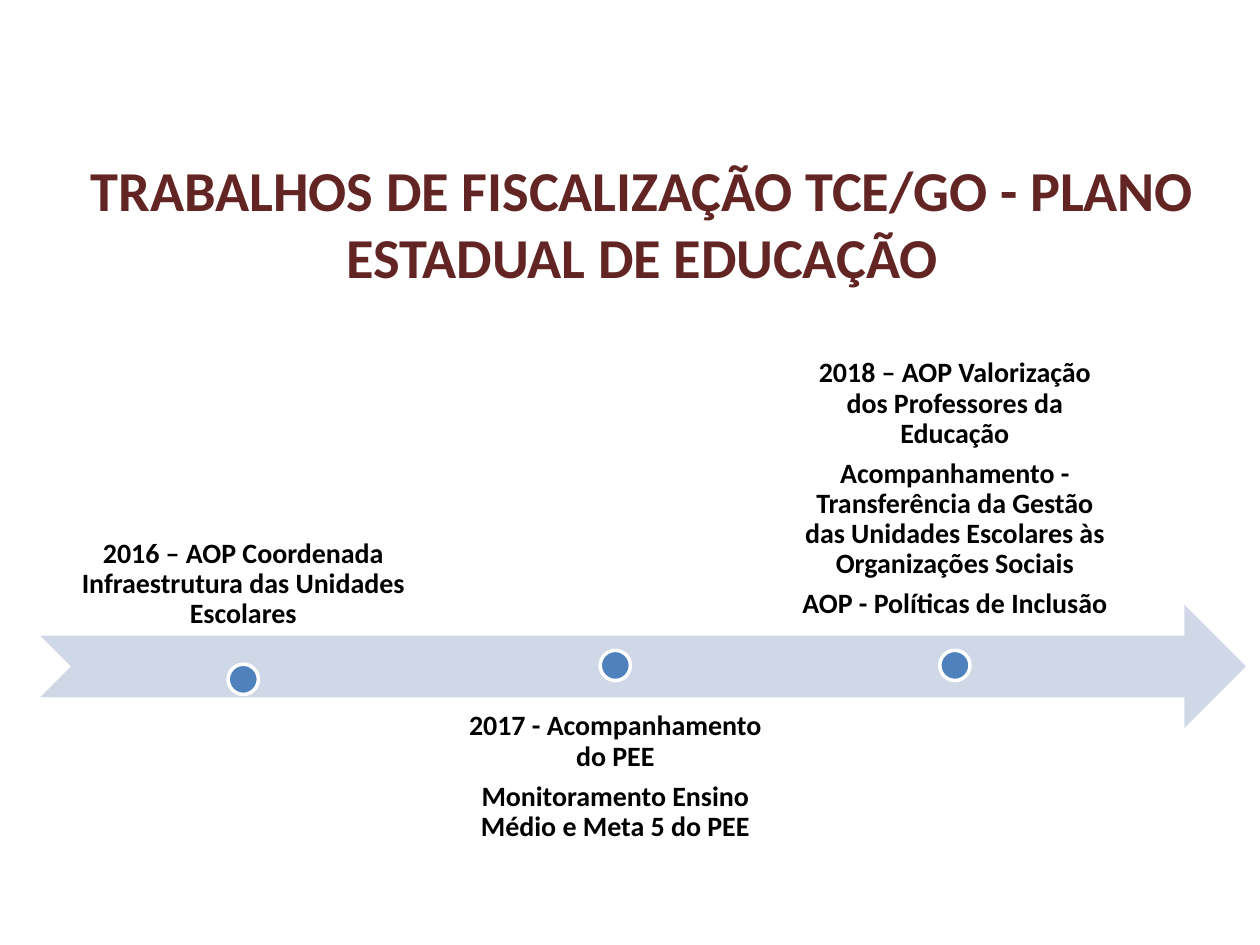
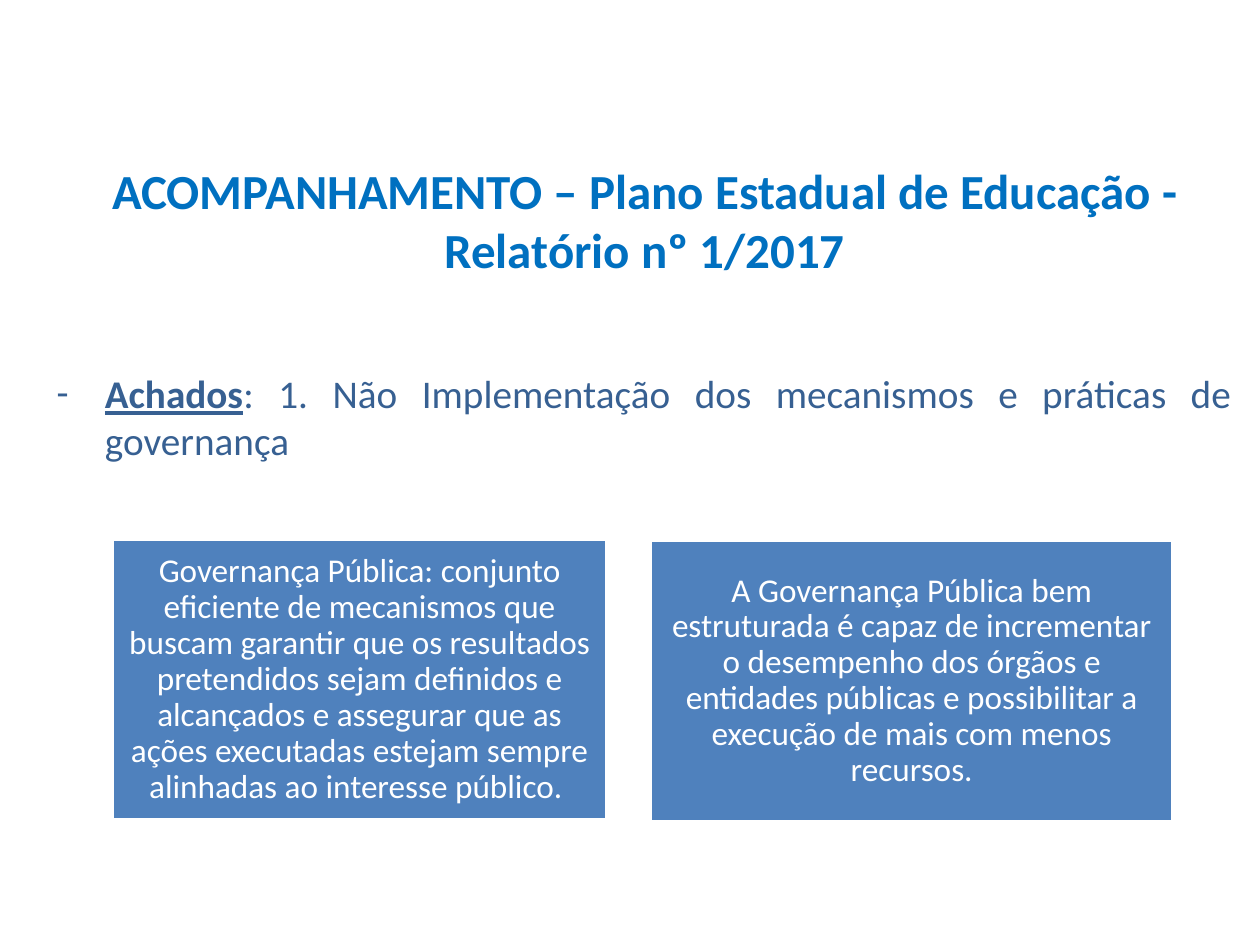
from lxml import etree
from pptx import Presentation
from pptx import util as u
from pptx.dml.color import RGBColor
from pptx.enum import shapes, text
from pptx.oxml.ns import qn

WINE = RGBColor(0x63, 0x25, 0x23)
AZURE = RGBColor(0x00, 0x70, 0xC0)
NAVY = RGBColor(0x37, 0x60, 0x92)
BLUE = RGBColor(0x4F, 0x81, 0xBD)
PALE = RGBColor(0xD0, 0xD8, 0xE8)
BLACK = RGBColor(0, 0, 0)
WHITE = RGBColor(255, 255, 255)

MID, LOW, TOP = text.MSO_ANCHOR.MIDDLE, text.MSO_ANCHOR.BOTTOM, text.MSO_ANCHOR.TOP
KIND = shapes.MSO_SHAPE
DOT = 0.61


def put(item, fmt):
    for key, val in fmt.items():
        setattr(item, key, val)


class Deck:
    def __init__(self):
        self.prs = Presentation()
        put(self.prs, {"slide_width": u.Cm(25.4), "slide_height": u.Cm(19.05)})
        self.slide = None

    def page(self, layout):
        self.slide = self.prs.slides.add_slide(self.prs.slide_layouts[layout])

    def place(self, item, box):
        put(item, dict(zip(("left", "top", "width", "height"), map(u.Cm, box))))

    def frame(self, item, anchor, inset=None, low=None):
        tf = item.text_frame
        put(tf, {"word_wrap": True, "auto_size": text.MSO_AUTO_SIZE.NONE,
                 "vertical_anchor": anchor})
        if inset is not None:
            for side in ("left", "right", "top", "bottom"):
                setattr(tf, f"margin_{side}", u.Cm(inset))
        if low is not None:
            tf.margin_bottom = u.Cm(low)
        return tf

    def run(self, par, words, size, tint, **fmt):
        run = par.add_run()
        run.text = words
        put(run.font, {"name": "Calibri", "size": u.Pt(size), **fmt})
        run.font.color.rgb = tint

    def fill(self, tf, lines, size, tint, bold):
        for num, line in enumerate(lines):
            par = tf.add_paragraph() if num else tf.paragraphs[0]
            put(par, {"alignment": text.PP_ALIGN.CENTER, "line_spacing": 0.9,
                      "space_after": u.Pt(0.35 * size)})
            self.run(par, line, size, tint, bold=bold)

    def title(self, words, box, size, tint):
        item = self.slide.shapes.title
        self.place(item, box)
        par = self.frame(item, MID).paragraphs[0]
        par.alignment = text.PP_ALIGN.CENTER
        self.run(par, words, size, tint, bold=True)

    def list(self, head, rest, box):
        item = self.slide.placeholders[1]
        self.place(item, box)
        par = self.frame(item, TOP).paragraphs[0]
        put(par, {"alignment": text.PP_ALIGN.JUSTIFY, "space_before": u.Pt(0)})
        props = par._p.get_or_add_pPr()
        props.set("marL", str(u.Cm(0.97)))
        props.set("indent", str(-u.Cm(0.97)))
        etree.SubElement(props, qn("a:buFont")).set("typeface", "Calibri")
        etree.SubElement(props, qn("a:buChar")).set("char", "-")
        self.run(par, head, 22.4, NAVY, bold=True, underline=True)
        self.run(par, rest, 22.4, NAVY, bold=False, underline=False)

    def shape(self, kind, box, tint, edge=True):
        item = self.slide.shapes.add_shape(kind, *map(u.Cm, box))
        item.shadow.inherit = False
        item.fill.solid()
        item.fill.fore_color.rgb = tint
        if edge:
            item.line.color.rgb = WHITE
            item.line.width = u.Pt(2)
        else:
            item.line.fill.background()
        return item

    def card(self, words, box):
        item = self.shape(KIND.RECTANGLE, box, BLUE)
        self.fill(self.frame(item, MID, 0.2), [words], 19, WHITE, False)

    def event(self, lines, box, anchor, dot_top, low=None):
        item = self.slide.shapes.add_textbox(*map(u.Cm, box))
        self.fill(self.frame(item, anchor, 0.3, low), lines, 16, BLACK, True)
        left = box[0] + (box[2] - DOT) / 2
        self.shape(KIND.OVAL, (left, dot_top, DOT, DOT), BLUE)


def main():
    deck = Deck()

    deck.page(5)
    deck.title("TRABALHOS DE FISCALIZAÇÃO TCE/GO - PLANO ESTADUAL DE EDUCAÇÃO",
               (0.79, 2.44, 24.31, 4.09), 32.2, WINE)
    deck.shape(KIND.NOTCHED_RIGHT_ARROW, (0.81, 12.19, 24.31, 2.49), PALE, False)
    deck.event(["2016 – AOP Coordenada Infraestrutura das Unidades Escolares"],
               (0.84, 10.06, 8.13, 3.53), LOW, 13.39, 0.89)
    deck.event(["2017 - Acompanhamento do PEE",
                "Monitoramento Ensino Médio e Meta 5 do PEE"],
               (9.14, 14.05, 6.53, 2.49), TOP, 13.11)
    deck.event(["2018 – AOP Valorização dos Professores da Educação",
                "Acompanhamento - Transferência da Gestão das Unidades Escolares "
                "às Organizações Sociais",
                "AOP - Políticas de Inclusão "],
               (15.82, 10.31, 6.86, 2.49), LOW, 13.11)

    deck.page(1)
    deck.title("ACOMPANHAMENTO – Plano Estadual de Educação - Relatório nº 1/2017",
               (0.89, 2.72, 24.21, 3.4), 28, AZURE)
    deck.list("Achados",
              ": 1. Não Implementação dos mecanismos e práticas de governança ",
              (0.89, 7.32, 24.21, 2.21))
    deck.card("Governança Pública: conjunto eficiente de mecanismos que buscam "
              "garantir que os resultados pretendidos sejam definidos e alcançados "
              "e assegurar que as ações executadas estejam sempre alinhadas ao "
              "interesse público. ", (2.26, 10.87, 9.98, 5.66))
    deck.card("A Governança Pública bem estruturada é capaz de incrementar o "
              "desempenho dos órgãos e entidades públicas e possibilitar a execução "
              "de mais com menos recursos.", (13.11, 10.9, 10.54, 5.66))

    deck.prs.save("out.pptx")


if __name__ == "__main__":
    main()
